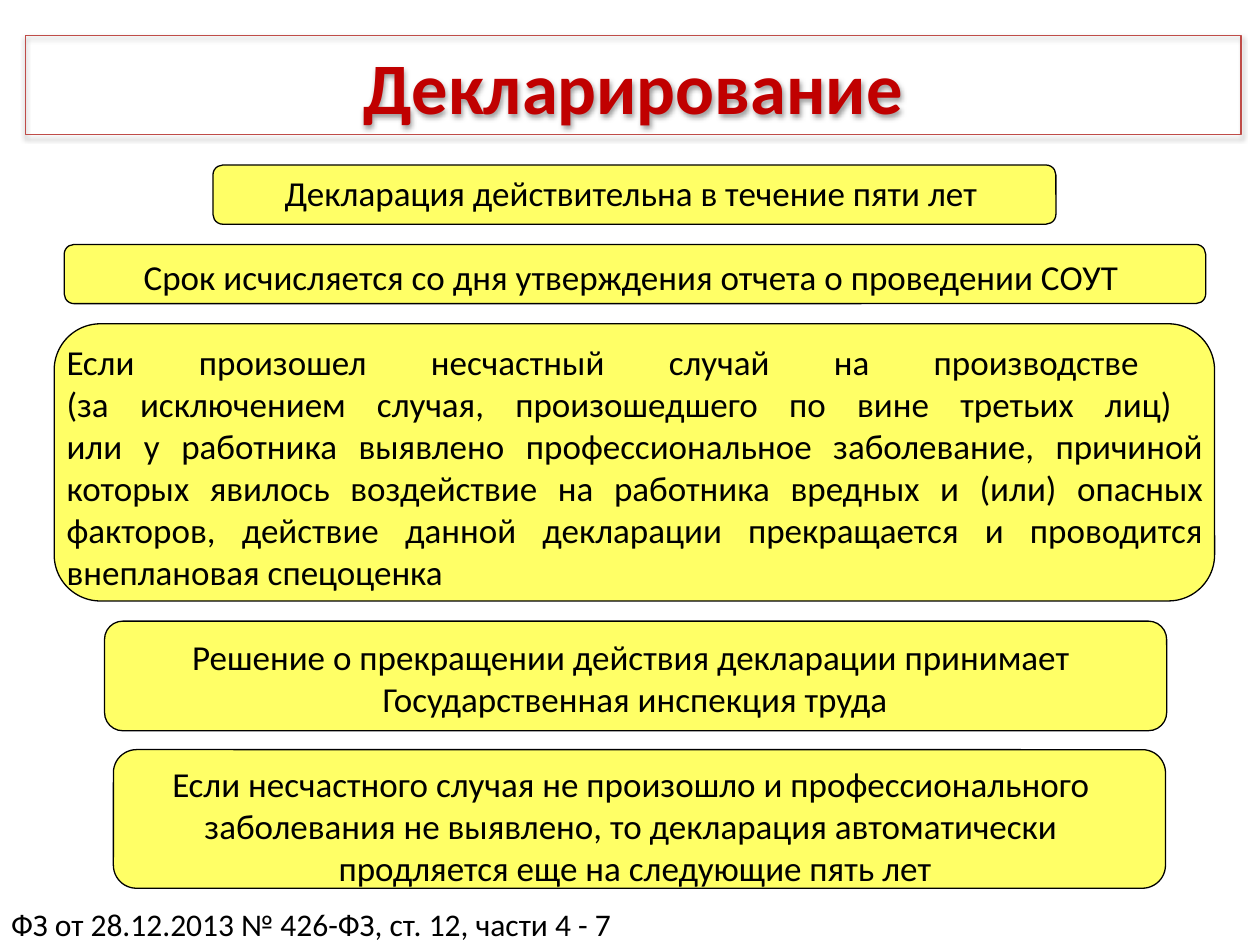
from lxml.etree import SubElement
from pptx import Presentation
from pptx.dml.color import RGBColor
from pptx.enum.shapes import MSO_SHAPE as Shape
from pptx.enum.text import MSO_ANCHOR as Anchor, PP_ALIGN as Align
from pptx.oxml.ns import qn
from pptx.util import Inches, Pt


def color(hex_string):
    return RGBColor.from_string(hex_string)


def write(paragraph, text, align, **font_format):
    paragraph.text = text
    paragraph.alignment = align
    for run in paragraph.runs:
        run.font.name = "Calibri"
        run.font.color.rgb = color(font_format.get("ink", "000000"))
        for name, value in font_format.items():
            if name != "ink":
                setattr(run.font, name, value)


prs = Presentation()
prs.slide_width, prs.slide_height = Inches(10), Inches(7.5)
slide = prs.slides.add_slide(prs.slide_layouts[6])
shapes = slide.shapes

# Yellow panels behind the statements
panels = [
    (0.9, 5.95, 8.35, 1.1),
    (0.83, 4.93, 8.43, 0.87),
    (0.43, 2.57, 9.21, 2.2),
    (0.51, 1.94, 9.06, 0.47),
    (1.69, 1.31, 6.69, 0.47),
]
for box in panels:
    panel = shapes.add_shape(Shape.ROUNDED_RECTANGLE, *map(Inches, box))
    panel.shadow.inherit = False
    panel.fill.solid()
    panel.fill.fore_color.rgb = color("FFFF66")
    panel.line.color.rgb = color("000000")
    panel.line.width = Pt(0.75)

# Title frame with a soft shadow below it
title = shapes.add_shape(Shape.RECTANGLE, Inches(0.2), Inches(0.28), Inches(9.65), Inches(0.79))
title.fill.background()
title.line.color.rgb = color("BF4C48")
title.line.width = Pt(0.75)
title.shadow.inherit = False
effects = title.element.spPr.find(qn("a:effectLst"))
shadow = SubElement(effects, qn("a:outerShdw"))
shadow_format = {"blurRad": Pt(3.1), "dist": Pt(1.6), "dir": 90 * 60000, "rotWithShape": 0}
for name, value in shadow_format.items():
    shadow.set(name, str(int(value)))
shadow_color = SubElement(shadow, qn("a:srgbClr"), val="000000")
SubElement(shadow_color, qn("a:alpha"), val="38000")
title.text_frame.vertical_anchor = Anchor.MIDDLE
write(title.text_frame.paragraphs[0], "Декларирование", Align.CENTER,
      size=Pt(41.4), bold=True, ink="C00000")

# Statements: text, alignment, whether a new panel starts here
statements = [
    ("Декларация действительна в течение пяти лет ", Align.CENTER, False),
    ("Срок исчисляется со дня утверждения отчета о проведении СОУТ ", Align.CENTER, True),
    ("Если произошел несчастный случай на производстве \n"
     "(за исключением случая, произошедшего по вине третьих лиц) \n"
     "или у работника выявлено профессиональное заболевание, причиной "
     "которых явилось воздействие на работника вредных и (или) опасных "
     "факторов, действие данной декларации прекращается и проводится "
     "внеплановая спецоценка", Align.JUSTIFY, True),
    ("Решение о прекращении действия декларации принимает ", Align.CENTER, True),
    ("Государственная инспекция труда", Align.CENTER, False),
    ("Если несчастного случая не произошло и профессионального ", Align.CENTER, True),
    ("заболевания не выявлено, то декларация автоматически \n"
     "продляется еще на следующие пять лет", Align.CENTER, False),
]
body = shapes.add_textbox(Inches(0.43), Inches(1.31), Inches(9.22), Inches(5.82)).text_frame
body.word_wrap = True
for index, (text, align, starts_panel) in enumerate(statements):
    statement = body.add_paragraph() if index else body.paragraphs[0]
    write(statement, text, align, size=Pt(20))
    if starts_panel:
        statement.space_before = Pt(24.4)

# Legal reference
reference = shapes.add_textbox(Inches(-0.01), Inches(7.13), Inches(6.61), Inches(0.37)).text_frame
reference.word_wrap = True
write(reference.paragraphs[0], "ФЗ от 28.12.2013 № 426-ФЗ, ст. 12, части 4 - 7",
      Align.LEFT, size=Pt(18))

prs.save("out.pptx")
